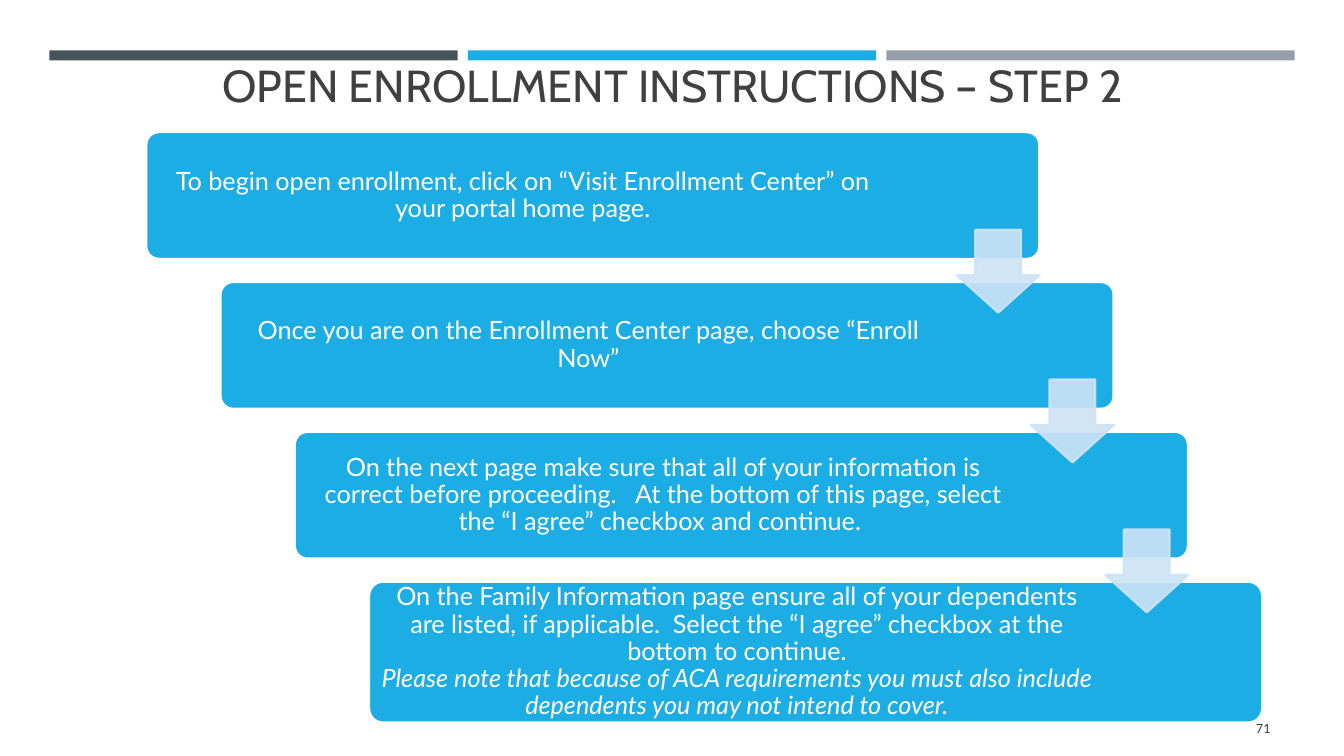
from lxml import etree
from pptx import Presentation
from pptx.dml.color import RGBColor
from pptx.enum.shapes import MSO_SHAPE
from pptx.enum.text import MSO_ANCHOR, MSO_AUTO_SIZE, PP_ALIGN
from pptx.oxml.ns import qn
from pptx.util import Inches, Pt

RECT, ROUND, DOWN = MSO_SHAPE.RECTANGLE, MSO_SHAPE.ROUNDED_RECTANGLE, MSO_SHAPE.DOWN_ARROW
MIDDLE, BOTTOM = MSO_ANCHOR.MIDDLE, MSO_ANCHOR.BOTTOM
CENTER, RIGHT = PP_ALIGN.CENTER, PP_ALIGN.RIGHT

# Content
TITLE = "OPEN ENROLLMENT INSTRUCTIONS – STEP 2"
PAGE = "71"
# text, italic note, box height, right margin
STEPS = [
    ("To begin open enrollment, click on “Visit Enrollment Center” on your "
     "portal home page.", "", 1.26, 1.5),
    ("Once you are on the Enrollment Center page, choose “Enroll Now”", "", 1.26, 1.67),
    ("On the next page make sure that all of your information is correct before "
     "proceeding.   At the bottom of this page, select the “I agree” checkbox and "
     "continue. ", "", 1.26, 1.66),
    ("On the Family Information page ensure all of your dependents are listed, if "
     "applicable.  Select the “I agree” checkbox at the bottom to continue.",
     "Please note that because of ACA requirements you must also include "
     "dependents you may not intend to cover.", 1.4, 1.67),
]
HEX = {"slate": "465359", "blue": "1CADE4", "gray": "969FA7",
       "pale": "CDE3F5", "ink": "404040", "white": "FFFFFF"}
BARS = ["slate", "blue", "gray"]

# Grid, in inches
BAR_X, BAR_Y, BAR_W, BAR_H, BAR_STEP = 0.49, 0.5, 4.05, 0.1, 4.15
BOX_X, BOX_Y, BOX_W = 1.45, 1.31, 8.86
STEP_X, STEP_Y = 2.21 / 3, 4.46 / 3
ARROW, DROP = 0.82, 0.97
INSET, CURVE = 0.11, 0.04  # the rounded corners already inset the text by CURVE


def color(name):
    return RGBColor.from_string(HEX[name])


def draw(kind, x, y, w, h, fill, line=None):
    shape = slide.shapes.add_shape(kind, Inches(x), Inches(y), Inches(w), Inches(h))
    shape.shadow.inherit = False
    shape.fill.solid()
    shape.fill.fore_color.rgb = color(fill)
    if line:
        shape.line.color.rgb = color(line)
        shape.line.width = Pt(1.75)
    else:
        shape.line.fill.background()
    return shape


def style(par, size, name, tint, align):
    par.alignment = align
    par.font.size = Pt(size)
    par.font.name = name
    par.font.color.rgb = color(tint)


deck = Presentation()
deck.slide_width, deck.slide_height = Inches(13.33), Inches(7.5)
slide = deck.slides.add_slide(deck.slide_layouts[5])

# Top bars
for i, tint in enumerate(BARS):
    draw(RECT, BAR_X + i * BAR_STEP, BAR_Y, BAR_W, BAR_H, tint)

# Title
title = slide.shapes.title
title.left, title.top = Inches(0.53), Inches(0.68)
title.width, title.height = Inches(12.29), Inches(0.48)
title.text = TITLE
frame = title.text_frame
frame.auto_size = MSO_AUTO_SIZE.NONE
frame.vertical_anchor = BOTTOM
style(frame.paragraphs[0], 32, "Cabin", "ink", CENTER)

# Page number
page = slide.shapes.add_textbox(Inches(11.55), Inches(7.03), Inches(1.15), Inches(0.4))
frame = page.text_frame
frame.word_wrap = True
frame.vertical_anchor = MIDDLE
frame.text = PAGE
style(frame.paragraphs[0], 9, "Lato", "ink", RIGHT)

# Step boxes
for i, (text, note, high, right) in enumerate(STEPS):
    box = draw(ROUND, BOX_X + i * STEP_X, BOX_Y + i * STEP_Y, BOX_W, high, "blue", "white")
    box.adjustments[0] = 0.1
    frame = box.text_frame
    frame.word_wrap = True
    frame.vertical_anchor = MIDDLE
    frame.margin_left = frame.margin_top = frame.margin_bottom = Inches(INSET - CURVE)
    frame.margin_right = Inches(right - CURVE)
    par = frame.paragraphs[0]
    par.line_spacing = 0.9
    style(par, 18, "Lato", "white", CENTER)
    par.add_run().text = text
    if note:
        par.add_line_break()
        run = par.add_run()
        run.text = note
        run.font.italic = True

# Arrows between the steps
for i in range(len(STEPS) - 1):
    x = BOX_X + BOX_W - ARROW + i * STEP_X
    arrow = draw(DOWN, x, BOX_Y + DROP + i * STEP_Y, ARROW, ARROW, "pale", "pale")
    arrow.adjustments[0], arrow.adjustments[1] = 0.55, 0.45
    for tone in arrow._element.spPr.iter(qn("a:srgbClr")):
        etree.SubElement(tone, qn("a:alpha"), val="90000")

deck.save("out.pptx")
